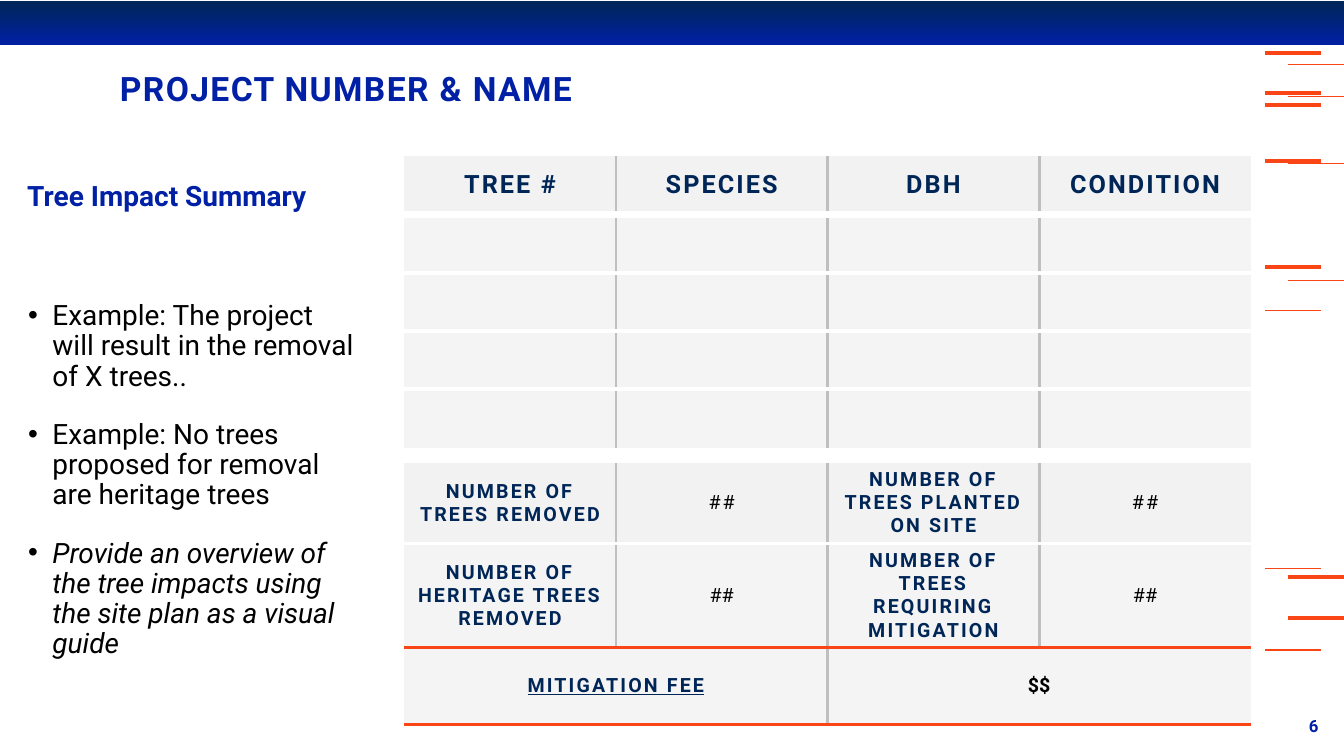
from dataclasses import dataclass

from lxml import etree
from pptx import Presentation
from pptx.dml.color import RGBColor
from pptx.enum.shapes import MSO_CONNECTOR, MSO_SHAPE
from pptx.enum.text import MSO_ANCHOR, MSO_AUTO_SIZE, PP_ALIGN
from pptx.oxml.ns import qn
from pptx.util import Emu, Inches, Pt

LEFT, CENTER, RIGHT = PP_ALIGN.LEFT, PP_ALIGN.CENTER, PP_ALIGN.RIGHT
TOP, MIDDLE, BOTTOM = MSO_ANCHOR.TOP, MSO_ANCHOR.MIDDLE, MSO_ANCHOR.BOTTOM
NO_AUTOFIT = MSO_AUTO_SIZE.NONE
STRAIGHT, RECTANGLE = MSO_CONNECTOR.STRAIGHT, MSO_SHAPE.RECTANGLE
TWO_CONTENT_LAYOUT = 3
SLIDE_COLUMNS, SLIDE_ROWS = 133.33, 75  # grid squares of a tenth of an inch
TABLE_LEFT, TABLE_COLUMN, TABLE_COLUMNS = 40.1, 21, 4
DASH_LENGTH, INNER_DASH, OUTER_DASH = 5.5, 125.5, 127.8


@dataclass(frozen=True)
class Theme:
    font: str = "Roboto"
    navy: str = "002657"
    blue: str = "0020A5"
    orange: str = "FA4616"
    black: str = "000000"
    white: str = "FFFFFF"
    divider: str = "BFBFBF"
    header_fill: str = "F2F2F2"
    cell_fill: str = "F4F4F4"
    title: int = 24
    body: int = 20
    header: int = 18
    label: int = 14
    page_number: int = 12
    thin: float = 0.98
    thick: float = 2.86


THEME = Theme()


@dataclass(frozen=True)
class Style:
    size: int
    color: str
    bold: bool = False
    spacing: float = 0
    underline: bool = False
    italic: bool = False


@dataclass(frozen=True)
class Border:
    color: str
    width: float


@dataclass(frozen=True)
class Entry:
    text: str
    style: Style
    span: int = 1


@dataclass(frozen=True)
class Row:
    height: float
    fill: str
    entries: list[Entry]
    below: Border | None


@dataclass(frozen=True)
class Dash:
    left: float
    top: float
    width: float


HEADER = Style(THEME.header, THEME.navy, True, 1.5)
LABEL = Style(THEME.label, THEME.navy, True, 1.5)
FEE_LABEL = Style(THEME.label, THEME.navy, True, 1.5, underline=True)
FEE = Style(THEME.label, THEME.black, True)
COUNT = Style(THEME.label, THEME.black)
SPACED_COUNT = Style(THEME.label, THEME.black, spacing=1.5)
BODY = Style(THEME.body, THEME.black)
GUIDANCE = Style(THEME.body, THEME.black, italic=True)
SUBTITLE = Style(THEME.body, THEME.blue, True)

DIVIDER = Border(THEME.divider, 2.25)
HEADER_GAP, ROW_GAP = Border(THEME.white, 6), Border(THEME.white, 3)
TOTAL_GAP, FEE_RULE = Border(THEME.white, 2.25), Border(THEME.orange, 2.25)

HEADINGS = ["TREE #", "SPECIES", "DBH", "CONDITION"]
BLANK = [Entry("", HEADER)] * TABLE_COLUMNS
TREE_ROWS = [
    Row(5.78, THEME.header_fill, [Entry(text, HEADER) for text in HEADINGS], HEADER_GAP),
    *[Row(5.78, THEME.cell_fill, BLANK, ROW_GAP)] * 3,
    Row(5.78, THEME.cell_fill, BLANK, None),
]
TOTAL_ROWS = [
    Row(7.6, THEME.header_fill, [
        Entry("NUMBER OF TREES REMOVED", LABEL), Entry("##", SPACED_COUNT),
        Entry("NUMBER OF TREES PLANTED ON SITE", LABEL), Entry("##", SPACED_COUNT)], TOTAL_GAP),
    Row(8.9, THEME.cell_fill, [
        Entry("NUMBER OF HERITAGE TREES REMOVED", LABEL), Entry("##", COUNT),
        Entry("NUMBER OF TREES REQUIRING MITIGATION", LABEL), Entry("##", COUNT)], FEE_RULE),
    Row(7.6, THEME.cell_fill, [
        Entry("MITIGATION FEE", FEE_LABEL, 2), Entry("$$", FEE, 2)], FEE_RULE),
]
NOTES = [
    ("Example: The project will result in the removal of X trees..", BODY),
    ("Example: No trees proposed for removal are heritage trees", BODY),
    ("Provide an overview of the tree impacts using the site plan as a visual guide", GUIDANCE),
]
DASHES = [
    *[Dash(INNER_DASH, top, THEME.thick) for top in (5.3, 9.2, 10.4, 16, 26.5)],
    *[Dash(INNER_DASH, top, THEME.thin) for top in (30.8, 56.4, 64.5)],
    *[Dash(OUTER_DASH, top, THEME.thin) for top in (6.4, 9.6, 16.2, 27.8)],
    *[Dash(OUTER_DASH, top, THEME.thick) for top in (57.2, 61.3)],
]


def grid(squares: float) -> Emu:
    return Inches(squares / 10)


def place(shape, left: float, top: float, width: float, height: float) -> None:
    shape.left, shape.top, shape.width, shape.height = map(grid, (left, top, width, height))


def write(para, text: str, style: Style, align=LEFT) -> None:
    para.text = text
    para.alignment = align
    font = para.font
    font.name, font.size, font.bold = THEME.font, Pt(style.size), style.bold
    font.italic, font.underline = style.italic, style.underline
    font.color.rgb = RGBColor.from_string(style.color)
    if style.spacing:
        para._p.pPr.find(qn("a:defRPr")).set("spc", str(round(style.spacing * 100)))


def prepare_frame(shape, anchor):
    """Give a placeholder no insets and a fixed size, and return its text frame."""
    frame = shape.text_frame
    frame.margin_left = frame.margin_right = frame.margin_top = frame.margin_bottom = 0
    frame.auto_size, frame.word_wrap, frame.vertical_anchor = NO_AUTOFIT, True, anchor
    return frame


def set_bullet(para, symbol: str | None) -> None:
    properties = para._p.get_or_add_pPr()
    properties.set("marL", str(Inches(0.25) if symbol else 0))
    properties.set("indent", str(Inches(-0.24) if symbol else 0))
    bullet = etree.SubElement(properties, qn("a:buChar" if symbol else "a:buNone"))
    if symbol:
        bullet.set("char", symbol)


def set_borders(cell, sides: dict[str, Border | None]) -> None:
    """Set the borders; sides are keyed L, R, T, B in that order."""
    properties = cell._tc.get_or_add_tcPr()
    for position, (side, border) in enumerate(sides.items()):
        line = etree.Element(qn(f"a:ln{side}"))
        if border:
            line.set("w", str(Pt(border.width)))
            fill = etree.SubElement(line, qn("a:solidFill"))
            etree.SubElement(fill, qn("a:srgbClr")).set("val", border.color)
        else:
            etree.SubElement(line, qn("a:noFill"))
        properties.insert(position, line)


def add_tree_table(page, top: float, rows: list[Row]) -> None:
    table = page.shapes.add_table(
        len(rows), TABLE_COLUMNS, grid(TABLE_LEFT), grid(top),
        grid(TABLE_COLUMN * TABLE_COLUMNS), grid(sum(row.height for row in rows))).table
    table.first_row = table.horz_banding = False
    above = None
    for number, row in enumerate(rows):
        table.rows[number].height = grid(row.height)
        start = 0
        for entry in row.entries:
            end = start + entry.span
            for column in range(start, end):
                cell = table.cell(number, column)
                cell.fill.solid()
                cell.fill.fore_color.rgb = RGBColor.from_string(row.fill)
                set_borders(cell, {
                    "L": DIVIDER if column == start > 0 else None,
                    "R": DIVIDER if end < TABLE_COLUMNS else None,
                    "T": above, "B": row.below})
            cell = table.cell(number, start)
            if entry.span > 1:
                cell.merge(table.cell(number, end - 1))
            cell.vertical_anchor = MIDDLE
            write(cell.text_frame.paragraphs[0], entry.text, entry.style, CENTER)
            start = end
        above = row.below


def add_banner(page) -> None:
    banner = page.shapes.add_shape(RECTANGLE, 0, grid(0.1), grid(SLIDE_COLUMNS), grid(4.4))
    banner.shadow.inherit = False
    banner.line.fill.background()
    banner.fill.gradient()
    banner.fill.gradient_angle = 270
    for stop, color in zip(banner.fill.gradient_stops, (THEME.navy, THEME.blue)):
        stop.color.rgb = RGBColor.from_string(color)


def add_dash(page, dash: Dash) -> None:
    line = page.shapes.add_connector(
        STRAIGHT, grid(dash.left), grid(dash.top), grid(dash.left + DASH_LENGTH), grid(dash.top))
    line.line.color.rgb = RGBColor.from_string(THEME.orange)
    line.line.width = Pt(dash.width)
    etree.SubElement(line._element.spPr, qn("a:effectLst"))


def add_texts(page) -> None:
    title, subtitle, notes = page.placeholders
    place(title, 11.9, 3, 117, 7.8)
    place(subtitle, 2.7, 18.1, 63.7, 4.5)
    place(notes, 2.7, 29.9, 32.8, 42.3)

    para = prepare_frame(title, BOTTOM).paragraphs[0]
    para.line_spacing = 0.9
    write(para, "PROJECT NUMBER & NAME", Style(THEME.title, THEME.blue, True, 1))

    para = prepare_frame(subtitle, TOP).paragraphs[0]
    para.line_spacing, para.space_before = 0.9, Pt(0)
    set_bullet(para, None)
    write(para, "Tree Impact Summary", SUBTITLE)

    frame = prepare_frame(notes, TOP)
    for number, (text, style) in enumerate(NOTES):
        para = frame.add_paragraph() if number else frame.paragraphs[0]
        para.line_spacing, para.space_after = 0.9, Pt(10)
        para.space_before = Pt(10 if number else 0)
        set_bullet(para, "•")
        write(para, text, style)

    box = page.shapes.add_textbox(grid(101.8), grid(70), grid(30), grid(4))
    box.text_frame.word_wrap, box.text_frame.vertical_anchor = True, MIDDLE
    write(box.text_frame.paragraphs[0], "6", Style(THEME.page_number, THEME.blue, True), RIGHT)


def main() -> None:
    deck = Presentation()
    deck.slide_width, deck.slide_height = grid(SLIDE_COLUMNS), grid(SLIDE_ROWS)
    page = deck.slides.add_slide(deck.slide_layouts[TWO_CONTENT_LAYOUT])
    add_banner(page)
    for dash in DASHES:
        add_dash(page, dash)
    add_texts(page)
    add_tree_table(page, 15.5, TREE_ROWS)
    add_tree_table(page, 45.9, TOTAL_ROWS)
    deck.save("out.pptx")


if __name__ == "__main__":
    main()
